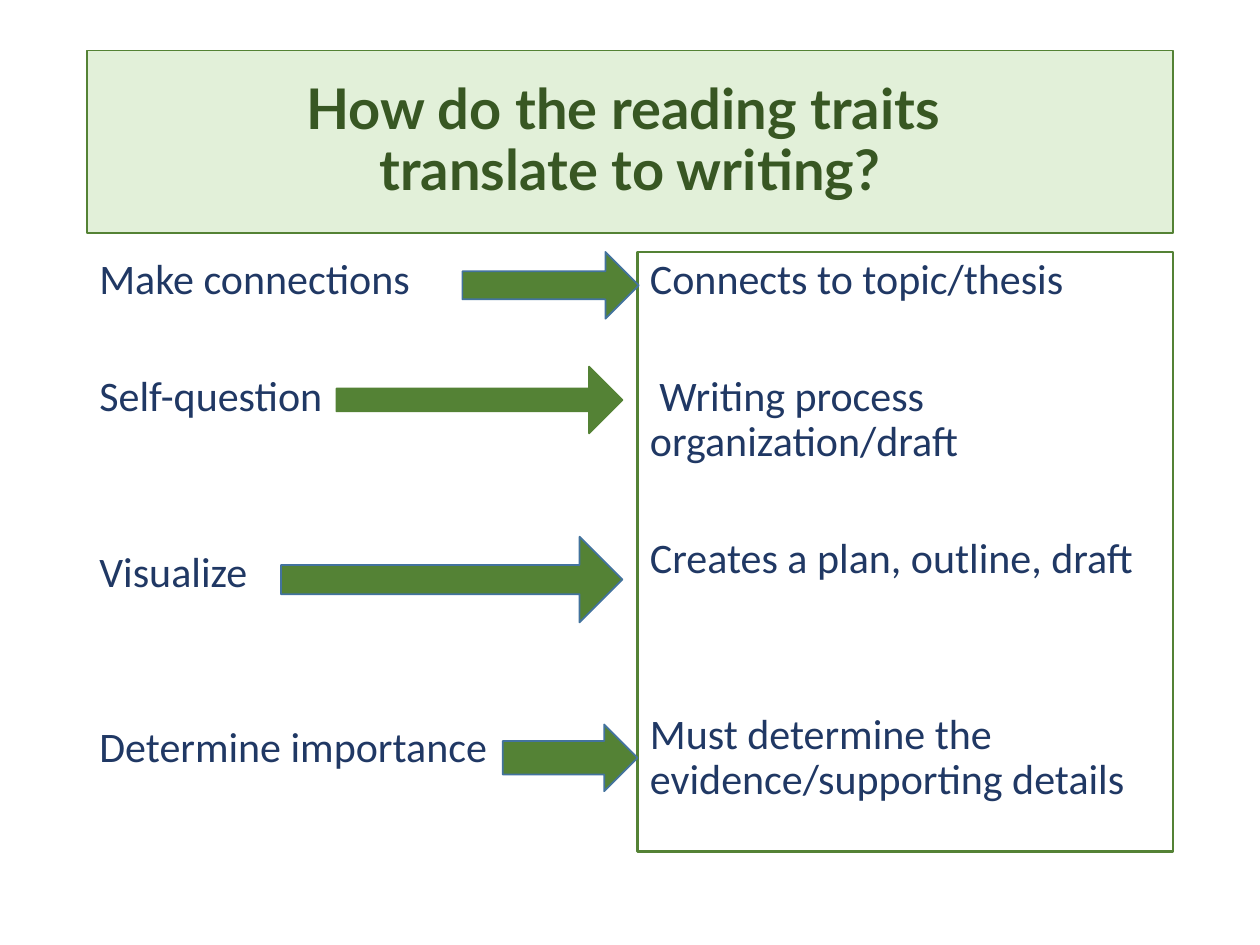
from pptx import Presentation
from pptx.dml.color import RGBColor
from pptx.enum.shapes import MSO_SHAPE
from pptx.enum.text import MSO_ANCHOR, PP_ALIGN
from pptx.util import Emu, Pt

RECT, ARROW = MSO_SHAPE.RECTANGLE, MSO_SHAPE.RIGHT_ARROW
TOP, MIDDLE = MSO_ANCHOR.TOP, MSO_ANCHOR.MIDDLE
LEFT, CENTER = PP_ALIGN.LEFT, PP_ALIGN.CENTER

EMU_PER_PX = 9144  # 100 px to the inch
COLORS = {
    "pale": "E2F0D9",
    "green": "548235",
    "dark_green": "385723",
    "navy": "203864",
    "blue": "43739E",
}
SPACE, ROW = 7.5, 33.5  # points: paragraph gap, one skipped row


def px(n):
    return Emu(n * EMU_PER_PX)


def rgb(name):
    return RGBColor.from_string(COLORS[name])


class Deck:
    def __init__(self, prs):
        self.slide = prs.slides.add_slide(prs.slide_layouts[6])

    def shape(self, kind, box, fill=None, line=None, width=1):
        sp = self.slide.shapes.add_shape(kind, *map(px, box))
        sp.shadow.inherit = False
        if fill:
            sp.fill.solid()
            sp.fill.fore_color.rgb = rgb(fill)
        else:
            sp.fill.background()
        if line:
            sp.line.color.rgb = rgb(line)
            sp.line.width = Pt(width)
        else:
            sp.line.fill.background()
        return sp

    def style(self, p, font, size, color, bold=False, align=LEFT):
        p.alignment = align
        p.line_spacing = 0.9
        for r in p.runs:
            r.font.name, r.font.size, r.font.bold = font, Pt(size), bold
            r.font.color.rgb = rgb(color)

    def title(self, text, box):
        sp = self.shape(RECT, box, "pale", "green", 0.75)
        tf = sp.text_frame
        tf.word_wrap = True
        tf.vertical_anchor = MIDDLE
        p = tf.paragraphs[0]
        p.text = text
        self.style(p, "Lato", 32, "dark_green", True, CENTER)

    def column(self, items, box, line=None):
        """Items are (rows skipped before, text)."""
        tf = self.shape(RECT, box, line=line, width=1.5).text_frame
        tf.word_wrap = True
        tf.vertical_anchor = TOP
        for i, (skipped, text) in enumerate(items):
            p = tf.add_paragraph() if i else tf.paragraphs[0]
            p.text = text
            p.space_before = Pt(SPACE + skipped * ROW)
            self.style(p, "Calibri", 24, "navy")

    def arrow(self, box, shaft, line):
        sp = self.shape(ARROW, box, "green", line)
        sp.adjustments[0] = shaft


def main():
    prs = Presentation()
    prs.slide_width, prs.slide_height = px(1000), px(750)
    deck = Deck(prs)

    # Title band
    deck.title("How do the reading traits \vtranslate to writing?", (69, 40, 862, 145))

    # Reading traits and their writing counterparts
    deck.column([
        (0, "Make connections"),
        (1, "Self-question"),
        (2, "Visualize"),
        (2, "Determine importance"),
    ], (69, 200, 425, 476))
    deck.column([
        (0, "Connects to topic/thesis"),
        (1, " Writing process organization/draft"),
        (1, "Creates a plan, outline, draft"),
        (2, "Must determine the evidence/supporting details"),
    ], (506, 200, 425, 476), "green")

    # Arrows from trait to counterpart
    for box, shaft, line in [
        ((367, 200, 140, 53), 0.42, "blue"),
        ((267, 291, 227, 53), 0.34, "green"),
        ((223, 426, 271, 68), 0.34, "blue"),
        ((399, 575, 107, 53), 0.5, "blue"),
    ]:
        deck.arrow(box, shaft, line)

    prs.save("out.pptx")


if __name__ == "__main__":
    main()
